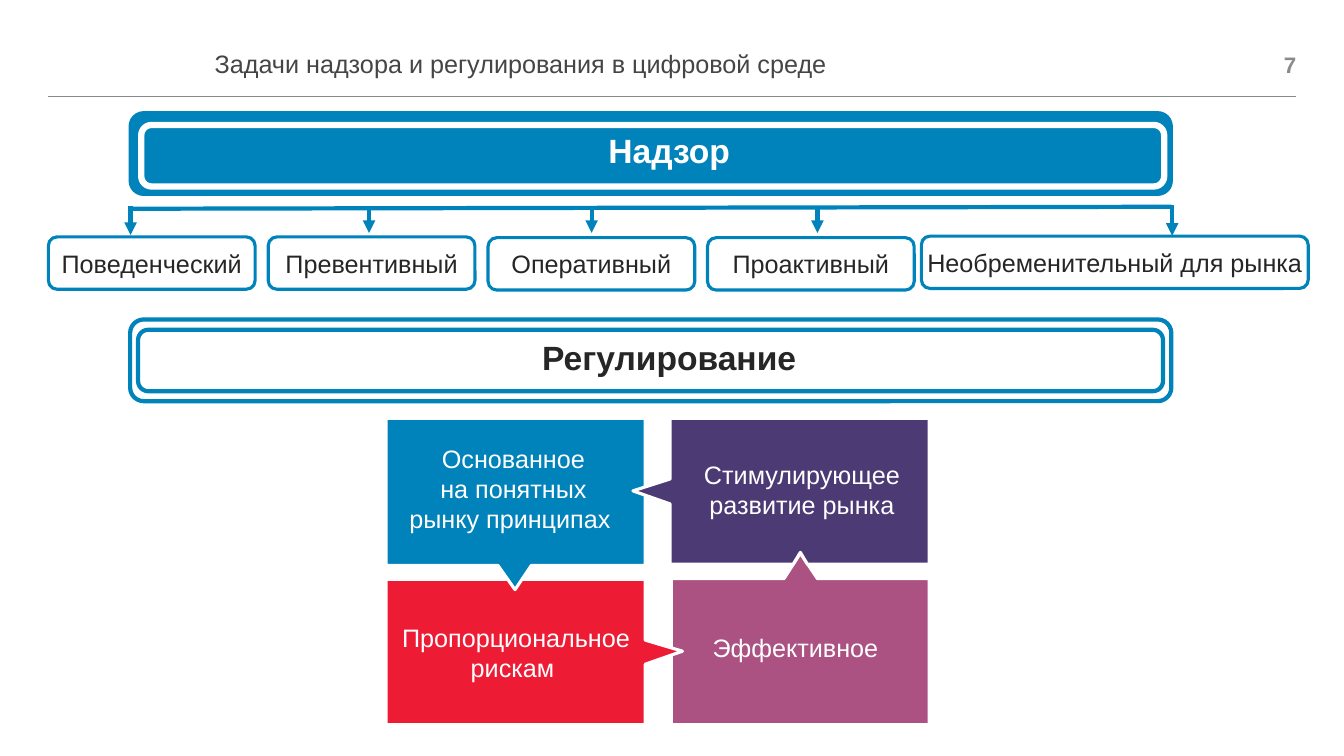
from dataclasses import dataclass

from pptx import Presentation
from pptx.dml.color import RGBColor as Rgb
from pptx.enum.shapes import MSO_CONNECTOR as Link, MSO_SHAPE as Form
from pptx.enum.text import MSO_ANCHOR as Anchor, PP_ALIGN as Align
from pptx.oxml.ns import qn
from pptx.oxml.xmlchemy import OxmlElement as Element
from pptx.util import Cm, Pt

COLORS = {
    "blue": "0082BB", "red": "ED1B34", "plum": "AB5282", "navy": "4C3A74",
    "white": "FFFFFF", "dark": "262626", "title": "444547", "gray": "888A8D",
}
Rect = tuple[float, float, float, float]
Point = tuple[float, float]


@dataclass
class Label:
    text: str
    rect: Rect
    color: str = "dark"
    size: int = 18
    bold: bool = False
    align: Align = Align.CENTER
    anchor: Anchor = Anchor.MIDDLE
    pad: Point = (0, 0)
    wrap: bool = True
    space: float = 1.0


@dataclass
class Banner:
    label: Label
    outer: Rect
    inner: Rect
    fill: str
    line: str
    widths: Point


@dataclass
class Tile:
    color: str
    points: list[Point]
    label: Label


def rgb(name: str) -> Rgb:
    return Rgb.from_string(COLORS[name])


def write(shape, label: Label) -> None:
    frame = shape.text_frame
    side, edge = (Cm(v) for v in label.pad)
    looks = {
        "margin_left": side, "margin_right": side, "margin_top": edge,
        "margin_bottom": edge, "word_wrap": label.wrap,
        "vertical_anchor": label.anchor,
    }
    for key, value in looks.items():
        setattr(frame, key, value)
    para = frame.paragraphs[0]
    para.text = label.text
    para.alignment = label.align
    para.line_spacing = label.space
    fonts = {"name": "Arial", "size": Pt(label.size), "bold": label.bold}
    for run in para.runs:
        for key, value in fonts.items():
            setattr(run.font, key, value)
        run.font.color.rgb = rgb(label.color)


def add_text(slide, label: Label) -> None:
    write(slide.shapes.add_textbox(*map(Cm, label.rect)), label)


def paint(shape, fill: str | None, line: str, width: float) -> None:
    shape.shadow.inherit = False
    if fill:
        shape.fill.solid()
        shape.fill.fore_color.rgb = rgb(fill)
    else:
        shape.fill.background()
    shape.line.color.rgb = rgb(line)
    shape.line.width = Pt(width)


def add_round(slide, rect: Rect, fill: str | None, line: str, width: float):
    shape = slide.shapes.add_shape(Form.ROUNDED_RECTANGLE, *map(Cm, rect))
    paint(shape, fill, line, width)
    return shape


def add_line(slide, start: Point, end: Point, color: str = "blue",
             width: float = 3, arrow: bool = False) -> None:
    line = slide.shapes.add_connector(Link.STRAIGHT, *map(Cm, start + end))
    line.line.color.rgb = rgb(color)
    line.line.width = Pt(width)
    if arrow:
        tail = Element("a:tailEnd")
        tail.set("type", "triangle")
        line.line._get_or_add_ln().append(tail)
    props = line._element.find(qn("p:spPr"))
    props.append(Element("a:effectLst"))


def add_banner(slide, banner: Banner) -> None:
    outer, inner = banner.widths
    add_round(slide, banner.outer, banner.fill, "blue", outer)
    add_text(slide, banner.label)
    add_round(slide, banner.inner, None, banner.line, inner)


def add_tile(slide, tile: Tile) -> None:
    first, *rest = [(Cm(x), Cm(y)) for x, y in tile.points]
    path = slide.shapes.build_freeform(*first, scale=1.0)
    path.add_line_segments(rest, close=True)
    paint(path.convert_to_shape(), tile.color, "white", 2.25)


def head(text: str, top: float, color: str) -> Label:
    """Make the bold heading of a banner."""
    return Label(text, (9.55, top, 14.63, 0.48), color, 24, True,
                 anchor=Anchor.TOP, wrap=False, space=0.9)


def note(text: str, rect: Rect) -> Label:
    """Make the white caption of a tile."""
    return Label(text, rect, "white", pad=(0.25, 0.13))


TITLE = Label("Задачи надзора и регулирования в цифровой среде",
              (5.41, 0.81, 21.69, 1.68), "title", align=Align.LEFT, space=0.9)
NUMBER = Label("7", (30.61, 1.19, 2.06, 0.89), "gray", 16, True, Align.RIGHT)

BANNERS = [
    Banner(head("Надзор", 3.4, "white"), (3.28, 2.84, 26.24, 2.06),
           (3.56, 3.15, 25.78, 1.55), "blue", "white", (2.25, 4.5)),
    Banner(head("Регулирование", 8.61, "dark"), (3.28, 8.05, 26.24, 2.06),
           (3.48, 8.31, 25.83, 1.55), "white", "blue", (3, 3)),
]

KINDS = [
    Label(text, (left, top, width, 1.32), pad=(0, 0.1))
    for text, left, top, width in [
        ("Поведенческий", 1.22, 5.97, 5.21),
        ("Превентивный", 6.76, 5.97, 5.21),
        ("Оперативный", 12.3, 5.99, 5.21),
        ("Проактивный", 17.83, 5.99, 5.21),
        ("Необременительный для рынка", 23.22, 5.95, 9.75),
    ]
]
ARROWS = [(3.29, 5.2, 5.92), (9.3, 5.2, 5.87), (14.91, 5.2, 5.87),
          (20.6, 5.2, 5.87), (29.54, 5.16, 5.94)]

TILES = [
    Tile("plum", [(23.42, 18.26), (23.42, 14.58), (20.6, 14.58), (20.17, 13.94),
                  (19.76, 14.58), (16.92, 14.58), (16.92, 18.26)],
         note("Эффективное ", (17.2, 15.8, 5.87, 1.02))),
    Tile("red", [(9.73, 14.6), (9.73, 18.26), (16.26, 18.26), (16.26, 16.74),
                 (17.2, 16.41), (16.26, 16.13), (16.26, 14.6)],
         note("Пропорциональное рискам ", (9.83, 15.54, 6.35, 1.8))),
    Tile("blue", [(9.73, 10.54), (9.73, 14.25), (12.55, 14.25), (12.98, 14.86),
                  (13.39, 14.25), (16.26, 14.25), (16.26, 10.54)],
         note("Основанное\vна понятных рынку принципах ",
              (9.88, 11.02, 6.12, 2.57))),
    Tile("navy", [(23.42, 10.54), (23.42, 14.22), (20.35, 14.22), (20.17, 13.92),
                  (19.99, 14.22), (16.89, 14.22), (16.89, 12.7), (15.95, 12.37),
                  (16.89, 12.07), (16.89, 10.54)],
         note("Стимулирующее развитие рынка", (17.2, 11.43, 6.02, 1.8))),
]


def main() -> None:
    deck = Presentation()
    deck.slide_width, deck.slide_height = Cm(33.87), Cm(19.05)
    slide = deck.slides.add_slide(deck.slide_layouts[6])

    add_line(slide, (1.2, 2.42), (32.67, 2.42), "gray", 0.5)
    add_text(slide, TITLE)
    add_text(slide, NUMBER)
    add_line(slide, (3.28, 5.26), (29.52, 5.21))
    for x, top, end in ARROWS:
        add_line(slide, (x, top), (x, end), arrow=True)
    for kind in KINDS:
        write(add_round(slide, kind.rect, "white", "blue", 2.25), kind)
    for banner in BANNERS:
        add_banner(slide, banner)
    for tile in TILES:
        add_tile(slide, tile)
    for tile in TILES:
        add_text(slide, tile.label)

    deck.save("out.pptx")


if __name__ == "__main__":
    main()
